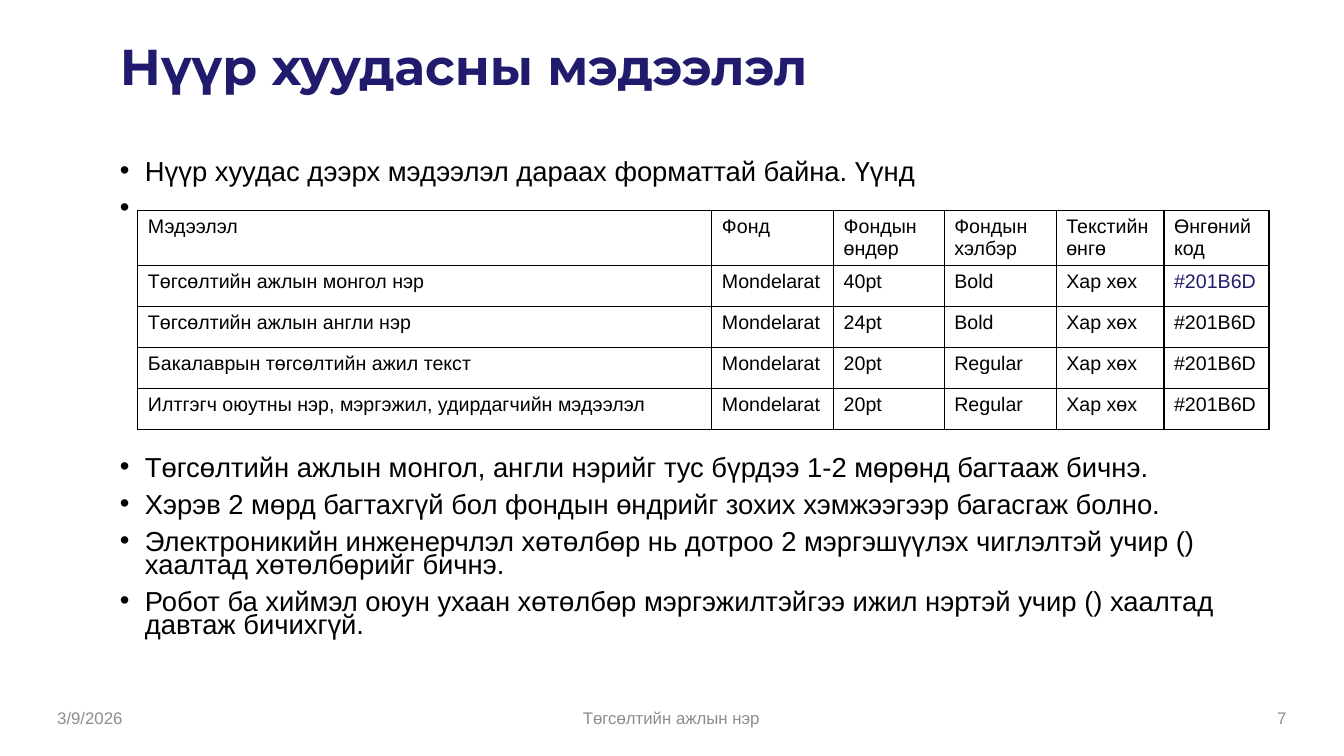
from dataclasses import dataclass

from lxml import etree
from pptx import Presentation
from pptx.dml.color import RGBColor
from pptx.enum.text import MSO_ANCHOR, PP_ALIGN
from pptx.oxml.ns import qn
from pptx.util import Pt

LEFT, CENTER, RIGHT = PP_ALIGN.LEFT, PP_ALIGN.CENTER, PP_ALIGN.RIGHT
TOP, MIDDLE = MSO_ANCHOR.TOP, MSO_ANCHOR.MIDDLE


@dataclass(frozen=True)
class Theme:
    head: str = "Montserrat"
    body: str = "Arial"
    navy: str = "201B6D"
    black: str = "000000"
    gray: str = "8C8C8C"
    title: float = 36
    text: float = 19.6
    cell: float = 14
    foot: float = 12


class Page:
    def __init__(self, slide, theme):
        self.slide = slide
        self.theme = theme

    def style(self, para, size, color, face=None, bold=False):
        font = para.font
        font.name = face or self.theme.body
        font.size = Pt(size)
        font.bold = bold
        font.color.rgb = RGBColor.from_string(color)

    def frame(self, left, top, width, height, anchor):
        box = self.slide.shapes.add_textbox(Pt(left), Pt(top), Pt(width), Pt(height))
        frame = box.text_frame
        frame.word_wrap = True
        frame.vertical_anchor = anchor
        return frame

    def title(self, text, *place):
        para = self.frame(*place, MIDDLE).paragraphs[0]
        para.text = text
        para.line_spacing = 0.9
        self.style(para, self.theme.title, self.theme.navy, self.theme.head, True)

    def footer(self, text, align, left, width):
        para = self.frame(left, 498.2, width, 28.8, MIDDLE).paragraphs[0]
        para.text = text
        para.alignment = align
        self.style(para, self.theme.foot, self.theme.gray)

    def bullets(self, items, *place):
        frame = self.frame(*place, TOP)
        for i, (text, gap) in enumerate(items):
            para = frame.add_paragraph() if i else frame.paragraphs[0]
            para.text = text
            para.line_spacing = 0.7
            para.space_before = Pt(gap)
            props = para._p.get_or_add_pPr()
            props.set("marL", str(Pt(18)))
            props.set("indent", str(-Pt(18)))
            etree.SubElement(props, qn("a:buFont"), typeface=self.theme.body)
            etree.SubElement(props, qn("a:buChar"), char="•")
            self.style(para, self.theme.text, self.theme.black)

    def border(self, cell):
        props = cell._tc.get_or_add_tcPr()
        for side in ("lnL", "lnR", "lnT", "lnB"):
            line = etree.SubElement(props, qn(f"a:{side}"), w=str(Pt(1)))
            fill = etree.SubElement(line, qn("a:solidFill"))
            etree.SubElement(fill, qn("a:srgbClr"), val=self.theme.black)

    def table(self, rows, widths, left, top, height, accent):
        shape = self.slide.shapes.add_table(
            len(rows), len(widths), Pt(left), Pt(top),
            Pt(sum(widths)), Pt(height * len(rows)))
        table = shape.table
        table.first_row = False
        table.horz_banding = False
        for column, width in zip(table.columns, widths):
            column.width = Pt(width)
        for r, row in enumerate(rows):
            for c, text in enumerate(row):
                cell = table.cell(r, c)
                cell.text = text
                cell.margin_bottom = Pt(1.8)
                self.border(cell)
                cell.fill.background()
                color = self.theme.navy if (r, c) == accent else self.theme.black
                self.style(cell.text_frame.paragraphs[0], self.theme.cell, color)


def main():
    deck = Presentation()
    deck.slide_width, deck.slide_height = Pt(960), Pt(540)
    theme = Theme()
    page = Page(deck.slides.add_slide(deck.slide_layouts[6]), theme)

    page.title("Нүүр хуудасны мэдээлэл", 78.5, 17.3, 847.4, 64.1)
    page.bullets([
        ("Нүүр хуудас дээрх мэдээлэл дараах форматтай байна. Үүнд", 0),
        (" ", 10),
        ("Төгсөлтийн ажлын монгол, англи нэрийг тус бүрдээ 1-2 мөрөнд багтааж бичнэ.", 168.5),
        ("Хэрэв 2 мөрд багтахгүй бол фондын өндрийг зохих хэмжээгээр багасгаж болно.", 10),
        ("Электроникийн инженерчлэл хөтөлбөр нь дотроо 2 мэргэшүүлэх чиглэлтэй "
         "учир () хаалтад хөтөлбөрийг бичнэ.", 10),
        ("Робот ба хиймэл оюун ухаан хөтөлбөр мэргэжилтэйгээ ижил нэртэй "
         "учир () хаалтад давтаж бичихгүй.", 10),
    ], 78.5, 113, 847.4, 373.7)

    header = ("Мэдээлэл", "Фонд", "Фондын өндөр", "Фондын хэлбэр",
              "Текстийн өнгө", "Өнгөний код")
    fields = (
        ("Төгсөлтийн ажлын монгол нэр", "40pt", "Bold"),
        ("Төгсөлтийн ажлын англи нэр", "24pt", "Bold"),
        ("Бакалаврын төгсөлтийн ажил текст", "20pt", "Regular"),
        ("Илтгэгч оюутны нэр, мэргэжил, удирдагчийн мэдээлэл", "20pt", "Regular"),
    )
    rows = [header] + [
        (name, "Mondelarat", size, weight, "Хар хөх", f"#{theme.navy}")
        for name, size, weight in fields]
    page.table(rows, (410, 87, 79, 80, 77, 75), 98.5, 150.5, 29.3, (1, 5))

    page.footer("3/9/2026", LEFT, 33.8, 216)
    page.footer("Төгсөлтийн ажлын нэр", CENTER, 257.8, 443.5)
    page.footer("7", RIGHT, 709.9, 216)
    deck.save("out.pptx")


if __name__ == "__main__":
    main()
